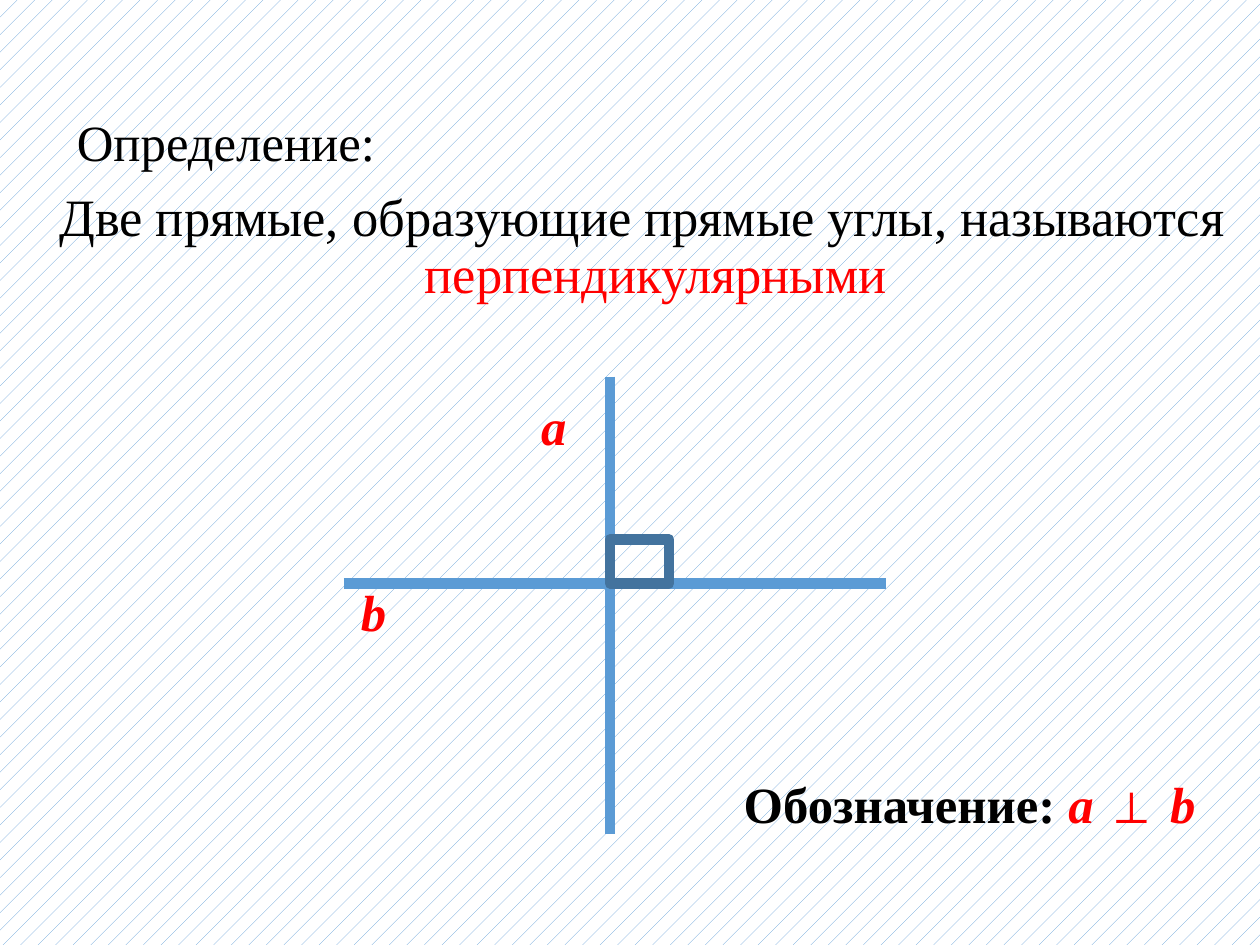
from dataclasses import dataclass

from lxml import etree
from pptx import Presentation
from pptx.dml.color import RGBColor
from pptx.enum.dml import MSO_PATTERN
from pptx.enum.shapes import MSO_CONNECTOR, MSO_SHAPE
from pptx.enum.text import MSO_ANCHOR, MSO_AUTO_SIZE, PP_ALIGN
from pptx.oxml.ns import qn
from pptx.util import Inches, Pt

CENTER, LEFT = PP_ALIGN.CENTER, PP_ALIGN.LEFT
TOP = MSO_ANCHOR.TOP
FIXED_SIZE = MSO_AUTO_SIZE.NONE
STRAIGHT = MSO_CONNECTOR.STRAIGHT
RECTANGLE = MSO_SHAPE.RECTANGLE
DOTS = MSO_PATTERN.PERCENT_5
TITLE_AND_CONTENT = 1


@dataclass(frozen=True)
class Theme:
    font: str = "Times New Roman"
    ink: RGBColor = RGBColor(0, 0, 0)
    accent: RGBColor = RGBColor(255, 0, 0)
    line: RGBColor = RGBColor(0x5B, 0x9B, 0xD5)
    angle: RGBColor = RGBColor(0x43, 0x73, 0x9E)
    paper: RGBColor = RGBColor(255, 255, 255)
    text_size: int = 29
    body_size: int = 30
    line_width: int = 6


THEME = Theme()
BOLD = {"bold": True}
RED = {"color": THEME.accent}
RED_BOLD = {**RED, **BOLD}
RED_LETTER = {**RED_BOLD, "italic": True}

# Spans are (text, font format).
HEADING = [("Определение:", {})]
DEFINITION = [
    ("Две прямые, образующие прямые углы, называются ", {}),
    ("перпендикулярными", RED),
]
LABELS = [
    ((3.77, 3.09, 1.25, 0.64), [("а", RED_LETTER)]),
    ((2.34, 4.57, 1.25, 0.64), [("b", RED_LETTER)]),
    ((5.58, 6.09, 4.23, 0.64), [
        ("Обозначение: ", BOLD),
        ("а ", RED_LETTER),
        ("⊥ ", RED_BOLD),
        ("b", RED_LETTER),
    ]),
]

CROSSING = (4.84, 4.63)
LINE_A_ENDS = (2.99, 6.62)
LINE_B_ENDS = (2.73, 7.03)
ANGLE_SIZE = (0.47, 0.35)


def place(shape, left, top, width, height):
    shape.left, shape.top = Inches(left), Inches(top)
    shape.width, shape.height = Inches(width), Inches(height)


def write(box, spans, size=THEME.text_size, align=CENTER, hanging=0,
          spacing=1.0, insets=(0.1, 0.05), wrap=True):
    frame = box.text_frame
    frame.auto_size = FIXED_SIZE
    frame.word_wrap = wrap
    frame.vertical_anchor = TOP
    frame.margin_left = frame.margin_right = Inches(insets[0])
    frame.margin_top = frame.margin_bottom = Inches(insets[1])
    para = frame.paragraphs[0]
    properties = para._p.get_or_add_pPr()
    properties.set("marL", str(Inches(hanging)))
    properties.set("indent", str(-Inches(hanging)))
    etree.SubElement(properties, qn("a:buNone"))
    para.alignment = align
    para.line_spacing = spacing
    para.space_before = Pt(0)
    for text, style in spans:
        span = para.add_run()
        span.text = text
        font = span.font
        font.name, font.size = THEME.font, Pt(size)
        font.bold = style.get("bold", False)
        font.italic = style.get("italic", False)
        font.color.rgb = style.get("color", THEME.ink)


def draw_line(page, start, end):
    line = page.shapes.add_connector(STRAIGHT, *map(Inches, start + end))
    line.line.color.rgb = THEME.line
    line.line.width = Pt(THEME.line_width)
    etree.SubElement(line._element.spPr, qn("a:effectLst"))


def draw_right_angle(page):
    width, height = ANGLE_SIZE
    x, y = CROSSING
    mark = page.shapes.add_shape(
        RECTANGLE, *map(Inches, (x, y - height, width, height)))
    mark.shadow.inherit = False
    mark.fill.background()
    mark.line.color.rgb = THEME.angle
    mark.line.width = Pt(THEME.line_width)


def main():
    deck = Presentation()
    deck.slide_width, deck.slide_height = Inches(10), Inches(7.5)
    page = deck.slides.add_slide(deck.slide_layouts[TITLE_AND_CONTENT])

    backdrop = page.background.fill
    backdrop.patterned()
    backdrop.pattern = DOTS
    backdrop.fore_color.rgb = THEME.line
    backdrop.back_color.rgb = THEME.paper

    heading, definition = page.placeholders
    place(heading, 0.51, 0.83, 2.59, 0.59)
    write(heading, HEADING, align=LEFT, wrap=False)
    place(definition, 0.1, 1.47, 10, 1.41)
    write(definition, DEFINITION, size=THEME.body_size, hanging=0.21,
          spacing=0.9)

    x, y = CROSSING
    draw_line(page, (x, LINE_A_ENDS[0]), (x, LINE_A_ENDS[1]))
    draw_line(page, (LINE_B_ENDS[0], y), (LINE_B_ENDS[1], y))
    draw_right_angle(page)

    for position, spans in LABELS:
        label = page.shapes.add_textbox(*map(Inches, position))
        write(label, spans, hanging=0.28, insets=(0.07, 0.04))

    deck.save("out.pptx")


if __name__ == "__main__":
    main()
